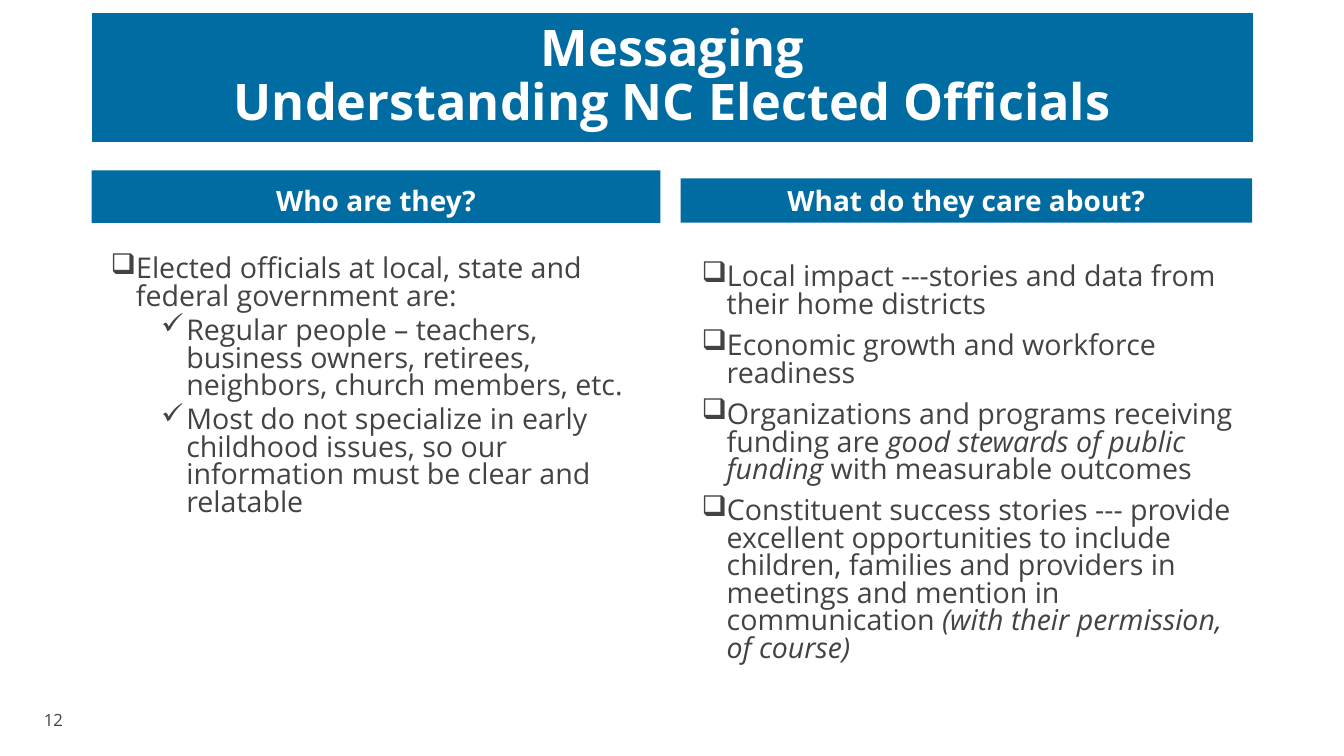
"""Build a slide on the people who hold office and what they care about."""
from dataclasses import dataclass

import lxml.etree
import pptx
import pptx.dml.color
import pptx.enum.shapes
import pptx.enum.text
import pptx.oxml.ns
import pptx.util

Inches = pptx.util.Inches
Align = pptx.enum.text.PP_ALIGN
Anchor = pptx.enum.text.MSO_ANCHOR


@dataclass(frozen=True)
class Theme:
    """Colours, font and type sizes."""
    blue: str = "006CA1"
    white: str = "FFFFFF"
    grey: str = "434343"
    font: str = "Open Sans"
    title: float = 36
    head: float = 20
    body: float = 20.4
    number: float = 12


@dataclass(frozen=True)
class Box:
    """Place and size in inches."""
    left: float
    top: float
    width: float
    height: float

    def spans(self) -> tuple:
        """Return the four lengths."""
        return tuple(map(Inches, (self.left, self.top, self.width, self.height)))


@dataclass(frozen=True)
class Span:
    """A run of text."""
    text: str
    slant: bool = False


@dataclass(frozen=True)
class Point:
    """A bullet point made of runs."""
    spans: tuple[Span, ...]
    level: int = 0


@dataclass(frozen=True)
class Column:
    """A heading bar with a list below."""
    head: str
    bar: Box
    area: Box
    points: tuple[Point, ...]


THEME = Theme()
MARKS = ("❑", "✓")
GAPS = (10, 5)
TITLE = ("Messaging", "Understanding NC Elected Officials")
COLUMNS = (
    Column("Who are they?", Box(0.91, 1.69, 5.64, 0.52), Box(1, 2.5, 5.56, 4.27), (
        Point((Span("Elected officials at local, state and federal government are:"),)),
        Point((Span("Regular people – teachers, business owners, retirees, "
                    "neighbors, church members, etc."),), 1),
        Point((Span("Most do not specialize in early childhood issues, so our "
                    "information must be clear and relatable"),), 1),
    )),
    Column("What do they care about?", Box(6.75, 1.77, 5.67, 0.44), Box(6.86, 2.58, 5.56, 4.19), (
        Point((Span("Local impact ---stories and data from their home districts"),)),
        Point((Span("Economic growth and workforce readiness"),)),
        Point((Span("Organizations and programs receiving funding are "),
               Span("good stewards of public funding", True),
               Span(" with measurable outcomes"))),
        Point((Span("Constituent success stories --- provide excellent opportunities to "
                    "include children, families and providers in meetings and mention in "
                    "communication "),
               Span("(with their permission, of course)", True))),
    )),
)


def tint(code: str) -> pptx.dml.color.RGBColor:
    """Turn a hex code into a colour."""
    return pptx.dml.color.RGBColor.from_string(code)


def add_run(para, text: str, size: float, hue: str, bold: bool = False, slant: bool = False) -> None:
    """Add one styled run."""
    run = para.add_run()
    run.text = text
    font = run.font
    font.name, font.size = THEME.font, pptx.util.Pt(size)
    font.bold, font.italic = bold, slant
    font.color.rgb = tint(hue)


def set_bar(shape, lines: tuple[str, ...], size: float, anchor) -> None:
    """Fill a blue bar with centred bold lines."""
    shape.fill.solid()
    shape.fill.fore_color.rgb = tint(THEME.blue)
    frame = shape.text_frame
    frame.word_wrap = True
    frame.auto_size = pptx.enum.text.MSO_AUTO_SIZE.NONE
    frame.vertical_anchor = anchor
    para = frame.paragraphs[0]
    para.alignment, para.line_spacing = Align.CENTER, 0.9
    for place, line in enumerate(lines):
        if place:
            para.add_line_break()
        add_run(para, line, size, THEME.white, bold=True)


def add_title(slide) -> None:
    """Place and style the title."""
    title = slide.shapes.title
    title.left, title.top, title.width, title.height = Box(0.92, 0.13, 11.5, 1.27).spans()
    title.line.color.rgb = tint(THEME.blue)
    title.line.width = pptx.util.Pt(0.75)
    set_bar(title, TITLE, THEME.title, Anchor.MIDDLE)


def add_text(slide, box: Box):
    """Add a text box that wraps."""
    frame = slide.shapes.add_textbox(*box.spans()).text_frame
    frame.word_wrap = True
    return frame


def add_points(slide, box: Box, points: tuple[Point, ...]) -> None:
    """Add a bullet list."""
    frame = add_text(slide, box)
    for place, point in enumerate(points):
        para = frame.add_paragraph() if place else frame.paragraphs[0]
        para.level, para.line_spacing = point.level, 0.8
        if place:
            para.space_before = pptx.util.Pt(GAPS[point.level])
        props = para._p.get_or_add_pPr()
        props.set("marL", str(Inches(0.25 + 0.5 * point.level)))
        props.set("indent", str(Inches(-0.25)))
        mark = lxml.etree.SubElement(props, pptx.oxml.ns.qn("a:buChar"))
        mark.set("char", MARKS[point.level])
        for span in point.spans:
            add_run(para, span.text, THEME.body, THEME.grey, slant=span.slant)


def add_column(slide, column: Column) -> None:
    """Add a heading bar and its list."""
    bar = slide.shapes.add_shape(pptx.enum.shapes.MSO_SHAPE.RECTANGLE, *column.bar.spans())
    bar.shadow.inherit = False
    bar.line.fill.background()
    set_bar(bar, (column.head,), THEME.head, Anchor.BOTTOM)
    add_points(slide, column.area, column.points)


def main() -> None:
    """Build and save the deck."""
    deck = pptx.Presentation()
    deck.slide_width, deck.slide_height = Inches(13.33), Inches(7.5)
    slide = deck.slides.add_slide(deck.slide_layouts[5])
    add_title(slide)
    for column in COLUMNS:
        add_column(slide, column)
    para = add_text(slide, Box(0.22, 6.99, 0.62, 0.4)).paragraphs[0]
    para.alignment = Align.CENTER
    add_run(para, "12", THEME.number, THEME.grey)
    deck.save("out.pptx")


if __name__ == "__main__":
    main()
